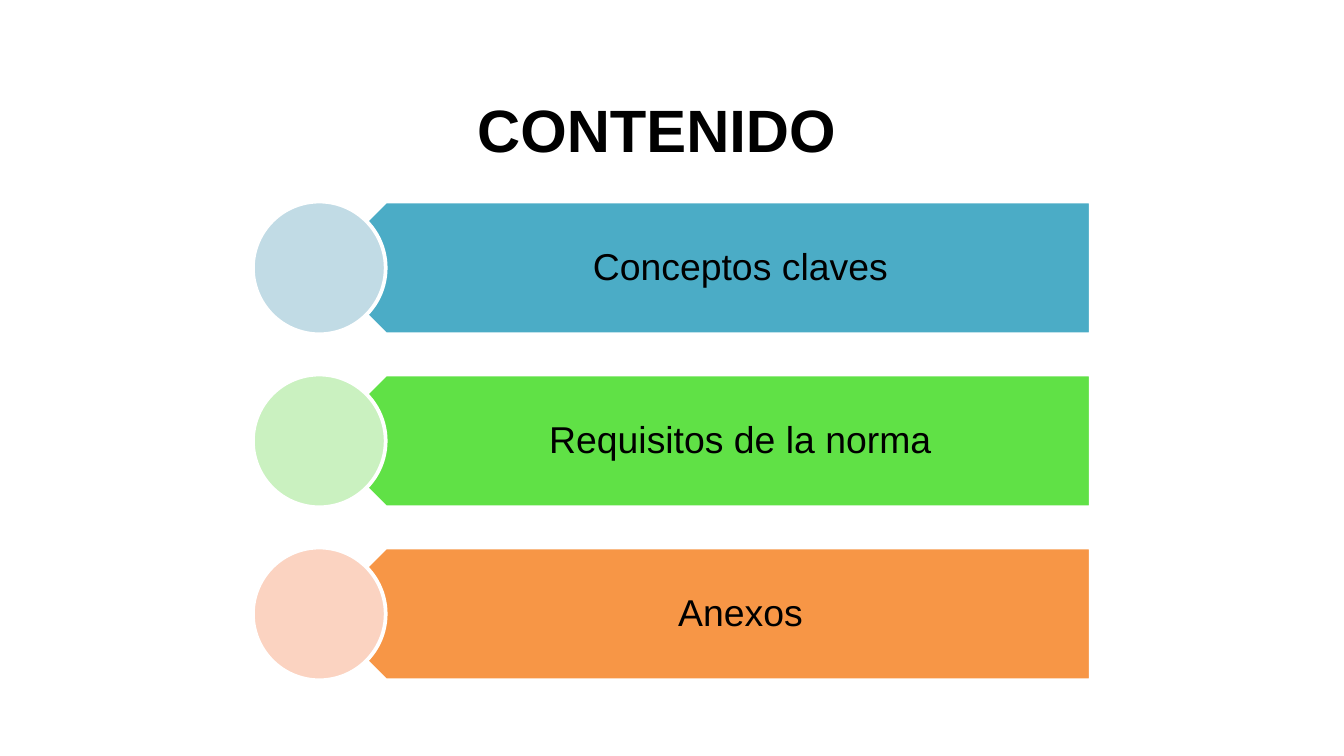
import pptx
import pptx.dml.color
import pptx.enum.shapes
import pptx.enum.text
import pptx.util
from pptx.util import Cm

heading = "CONTENIDO"
topics = [
    ("Conceptos claves", "bar_blue", "disc_blue"),
    ("Requisitos de la norma", "bar_green", "disc_green"),
    ("Anexos", "bar_orange", "disc_orange"),
]

theme = {
    "font": "Arial",
    "heading_size": 32,
    "topic_size": 20,
    "outline_width": 2,
    "text": "000000",
    "outline": "FFFFFF",
    "bar_blue": "4BACC6",
    "disc_blue": "C1DBE5",
    "bar_green": "60E146",
    "disc_green": "CAF1C0",
    "bar_orange": "F79646",
    "disc_orange": "FBD3C1",
}

first_top = Cm(3.81)
row_pitch = Cm(3.27)
disc_left = Cm(4.78)
disc_size = Cm(2.51)
bar_left = disc_left + disc_size // 2
bar_width = Cm(14.58)
label_offset = disc_size // 4


def color(key):
    return pptx.dml.color.RGBColor.from_string(theme[key])


def add_filled(slide, kind, box, fill):
    figure = slide.shapes.add_shape(kind, *box)
    figure.shadow.inherit = False
    figure.fill.solid()
    figure.fill.fore_color.rgb = color(fill)
    figure.line.color.rgb = color("outline")
    figure.line.width = pptx.util.Pt(theme["outline_width"])
    return figure


def add_label(slide, box, wording, size, bold=False, spacing=1.0,
              insets=(0.25, 0.13, 0.25, 0.13)):
    frame = slide.shapes.add_textbox(*box).text_frame
    frame.word_wrap = True
    frame.vertical_anchor = pptx.enum.text.MSO_ANCHOR.MIDDLE
    (frame.margin_left, frame.margin_top,
     frame.margin_right, frame.margin_bottom) = map(Cm, insets)
    frame.text = wording
    line = frame.paragraphs[0]
    line.alignment = pptx.enum.text.PP_ALIGN.CENTER
    line.line_spacing = spacing
    font = line.runs[0].font
    font.name = theme["font"]
    font.size = pptx.util.Pt(theme[size])
    font.bold = bold
    font.color.rgb = color("text")


def add_topic(slide, top, wording, bar_fill, disc_fill):
    shapes = pptx.enum.shapes.MSO_SHAPE
    bar = add_filled(slide, shapes.PENTAGON,
                     (bar_left, top, bar_width, disc_size), bar_fill)
    bar.rotation = 180
    add_label(slide,
              (bar_left + label_offset, top, bar_width - label_offset, disc_size),
              wording, "topic_size", spacing=0.9, insets=(1.12, 0.2, 0.41, 0.2))
    add_filled(slide, shapes.OVAL,
               (disc_left, top, disc_size, disc_size), disc_fill)


def main():
    deck = pptx.Presentation()
    deck.slide_width, deck.slide_height = Cm(25.4), Cm(14.29)
    slide = deck.slides.add_slide(deck.slide_layouts[6])
    add_label(slide, (Cm(5.21), Cm(1.04), Cm(14.4), Cm(2.77)),
              heading, "heading_size", bold=True)
    for row, topic in enumerate(topics):
        add_topic(slide, first_top + row * row_pitch, *topic)
    deck.save("out.pptx")


if __name__ == "__main__":
    main()
